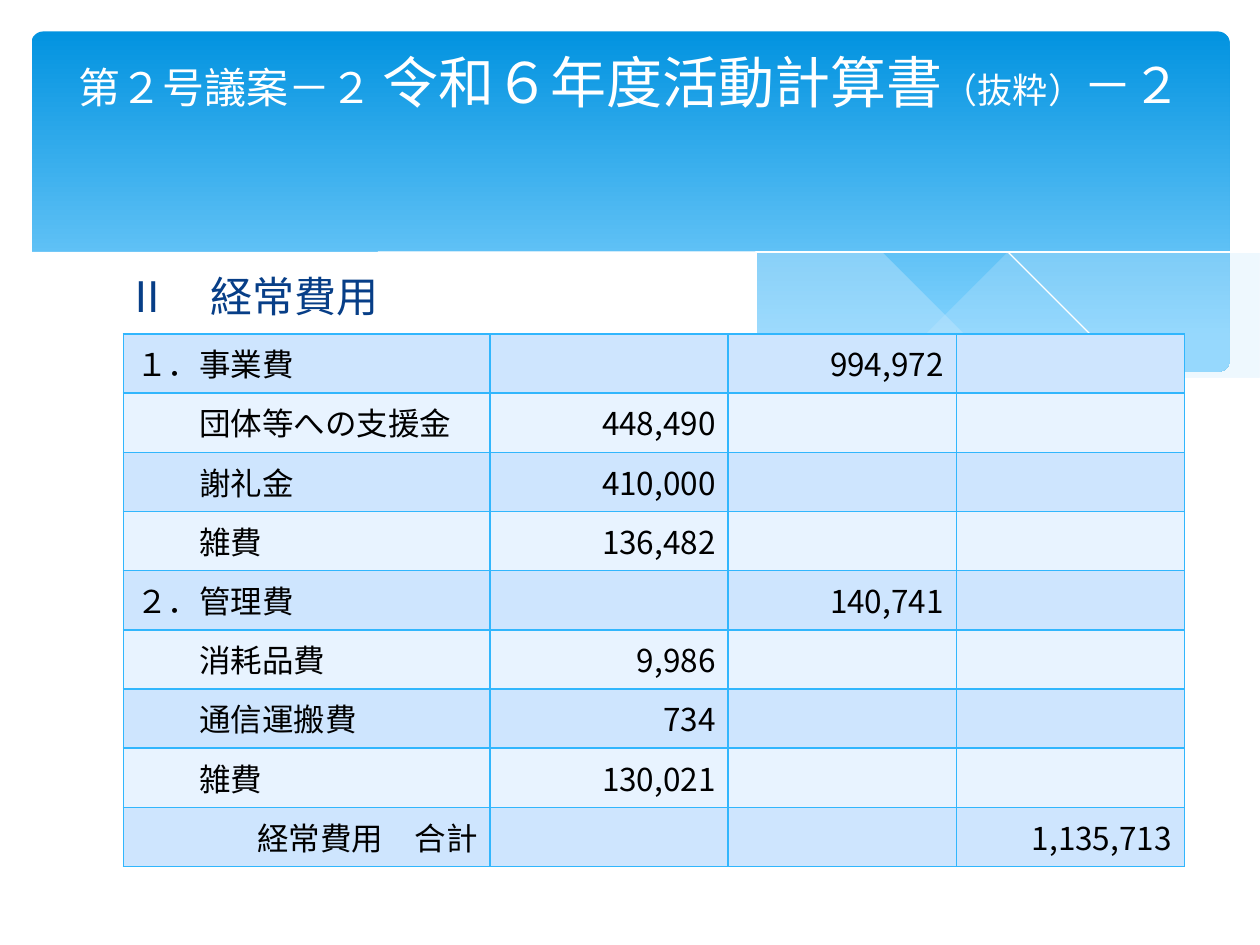
import pptx
import pptx.dml.color
import pptx.enum.shapes
import pptx.enum.text
import pptx.oxml
import pptx.oxml.ns
import pptx.util
from pptx.util import Inches

THEME = {
    "sky_top": "0293E0", "sky_bottom": "83D3FE", "mist": "C6E7FC",
    "white": "FFFFFF", "heading": "073E87", "text": "000000",
    "border": "31B6FD", "bands": ("CEE5FE", "E8F3FF"),
    "font": "Calibri", "table_font": "Noto Sans CJK JP",
    "heading_size": 24, "table_size": 18,
}

TITLE = [("第２号議案－２ ", 24), ("令和６年度活動計算書", 32), ("（抜粋）", 20), ("－２", 28)]
HEADING = "Ⅱ　経常費用"

# label, label style, detail, subtotal, total
EXPENSES = [
    ("１．事業費", "group", "", "994,972", ""),
    ("団体等への支援金", "item", "448,490", "", ""),
    ("謝礼金", "item", "410,000", "", ""),
    ("雑費", "item", "136,482", "", ""),
    ("２．管理費", "group", "", "140,741", ""),
    ("消耗品費", "item", "9,986", "", ""),
    ("通信運搬費", "item", "734", "", ""),
    ("雑費", "item", "130,021", "", ""),
    ("経常費用　合計", "total", "", "", "1,135,713"),
]
COLUMNS = [2.91, 1.89, 1.81, 1.81]
TABLE_LEFT, TABLE_TOP, ROW_HEIGHT = 0.98, 2.65, 0.47

# Each wave is a list of edges; each edge is a smooth curve through its points.
RIGHT_RIBBON = [
    [(9.76, 2), (9.21, 2.1), (8.61, 2.23), (7.79, 2.42), (7.06, 2.57), (6.61, 2.65)],
    [(6.61, 2.65), (7.19, 2.72), (7.69, 2.77), (8.14, 2.78), (8.63, 2.75),
     (9.05, 2.69), (9.42, 2.59), (9.76, 2.47)],
]
LONG_RIBBON = [
    [(8.93, 2.73), (8.07, 2.6), (7.06, 2.4), (6.29, 2.22), (5.55, 2.05), (4.89, 1.94),
     (4.2, 1.87), (3.61, 1.85), (3.13, 1.88), (2.86, 1.91)],
    [(2.86, 1.91), (3.62, 2.03), (4.49, 2.22), (5.3, 2.4), (6.01, 2.55), (6.8, 2.68),
     (7.48, 2.76), (8.07, 2.78), (8.57, 2.77), (8.93, 2.73)],
]
FALLING_LINE = [[(3.09, 1.95), (3.53, 1.89), (4.16, 1.87), (4.89, 1.9), (5.82, 2),
                 (6.95, 2.19), (7.95, 2.41), (9.07, 2.72)]]
RISING_LINE = [[(6.13, 2.57), (6.95, 2.35), (7.76, 2.16), (8.66, 1.99), (9.24, 1.9),
                (9.75, 1.85)]]
WHITE_WAVE = [
    [(9.77, 2.46), (9.3, 2.62), (8.75, 2.73), (8.09, 2.77), (7.44, 2.74), (6.68, 2.65),
     (5.79, 2.5), (5.03, 2.33), (4.47, 2.2), (3.65, 2.02), (2.92, 1.9), (2.3, 1.85),
     (1.77, 1.84), (1.19, 1.87), (0.76, 1.95), (0.4, 2.05), (0.23, 2.13)],
    [(0.23, 3.29), (9.77, 3.29)],
]


def rgb(name):
    return pptx.dml.color.RGBColor.from_string(THEME.get(name, name))


def smooth(points, steps=4):
    """Catmull-Rom curve through the points."""
    padded = [points[0], *points, points[-1]]
    curve = [points[0]]
    for a, b, c, d in zip(padded, padded[1:], padded[2:], padded[3:]):
        for i in range(1, steps + 1):
            t = i / steps
            curve.append(tuple(
                (2 * q + (r - p) * t + (2 * p - 5 * q + 4 * r - s) * t ** 2
                 + (3 * q - p - 3 * r + s) * t ** 3) / 2
                for p, q, r, s in zip(a, b, c, d)))
    return curve


def add_wave(slide, edges, fill=None, alpha=100):
    """Filled wave, or a white hairline when no fill is given."""
    points = [pt for edge in edges for pt in smooth(edge)]
    builder = slide.shapes.build_freeform(*points[0], scale=Inches(1))
    builder.add_line_segments(points[1:], close=fill is not None)
    sp = builder.convert_to_shape()
    sp.shadow.inherit = False
    if fill is None:
        sp.fill.background()
        sp.line.color.rgb = rgb("white")
        sp.line.width = 0
        return
    sp.fill.solid()
    sp.fill.fore_color.rgb = rgb(fill)
    sp.line.fill.background()
    if alpha < 100:
        color = sp.fill._xPr.find(".//" + pptx.oxml.ns.qn("a:srgbClr"))
        color.append(pptx.oxml.parse_xml(
            f'<a:alpha {pptx.oxml.ns.nsdecls("a")} val="{alpha * 1000}"/>'))


def add_sky(slide):
    sp = slide.shapes.add_shape(pptx.enum.shapes.MSO_SHAPE.ROUNDED_RECTANGLE,
                                Inches(0.25), Inches(0.25), Inches(9.51), Inches(2.7))
    sp.adjustments[0] = 0.034
    sp.shadow.inherit = False
    sp.line.fill.background()
    sp.fill.gradient()
    sp.fill.gradient_angle = 270
    for stop, color, pos in zip(sp.fill.gradient_stops, ("sky_top", "sky_bottom"), (0, 0.9)):
        stop.color.rgb = rgb(color)
        stop.position = pos


def style(r, size, color, font):
    r.font.size = pptx.util.Pt(size)
    r.font.color.rgb = rgb(color)
    r.font.name = font


def add_text(slide, box, runs, color):
    tf = slide.shapes.add_textbox(*map(Inches, box)).text_frame
    tf.word_wrap = True
    for text, size in runs:
        r = tf.paragraphs[0].add_run()
        r.text = text
        style(r, size, color, THEME["font"])
    return tf


def add_borders(cell):
    tcPr = cell._tc.get_or_add_tcPr()
    for side in "LRTB":
        tcPr.append(pptx.oxml.parse_xml(
            f'<a:ln{side} {pptx.oxml.ns.nsdecls("a")} w="12700"><a:solidFill>'
            f'<a:srgbClr val="{THEME["border"]}"/></a:solidFill></a:ln{side}>'))


def add_expense_table(slide):
    table = slide.shapes.add_table(
        len(EXPENSES), len(COLUMNS), Inches(TABLE_LEFT), Inches(TABLE_TOP),
        Inches(sum(COLUMNS)), Inches(ROW_HEIGHT * len(EXPENSES))).table
    for column, width in zip(table.columns, COLUMNS):
        column.width = Inches(width)
    for i, (label, kind, *amounts) in enumerate(EXPENSES):
        for j, text in enumerate([label, *amounts]):
            cell = table.cell(i, j)
            add_borders(cell)
            cell.fill.solid()
            cell.fill.fore_color.rgb = rgb(THEME["bands"][i % 2])
            cell.text_frame.text = text
            p = cell.text_frame.paragraphs[0]
            p.font.size = pptx.util.Pt(THEME["table_size"])
            if j or kind == "total":
                p.alignment = pptx.enum.text.PP_ALIGN.RIGHT
            elif kind == "item":
                p._p.get_or_add_pPr().set("marL", str(Inches(0.5)))
            for r in p.runs:
                style(r, THEME["table_size"], "text", THEME["table_font"])


def main():
    prs = pptx.Presentation()
    prs.slide_width, prs.slide_height = Inches(10), Inches(7.5)
    slide = prs.slides.add_slide(prs.slide_layouts[6])

    add_sky(slide)
    add_wave(slide, RIGHT_RIBBON, "mist", 29)
    add_wave(slide, LONG_RIBBON, "mist", 40)
    add_wave(slide, FALLING_LINE)
    add_wave(slide, RISING_LINE)
    add_wave(slide, WHITE_WAVE, "white")

    tf = add_text(slide, (0.5, 0.37, 9, 1.1), TITLE, "white")
    tf.vertical_anchor = pptx.enum.text.MSO_ANCHOR.MIDDLE
    tf.margin_top, tf.margin_bottom = 0, Inches(0.56)
    tf.margin_left = tf.margin_right = Inches(0.05)
    tf.paragraphs[0].alignment = pptx.enum.text.PP_ALIGN.CENTER

    add_expense_table(slide)
    add_text(slide, (0.91, 2.1, 8.1, 4.64), [(HEADING, THEME["heading_size"])], "heading")
    prs.save("out.pptx")


if __name__ == "__main__":
    main()
